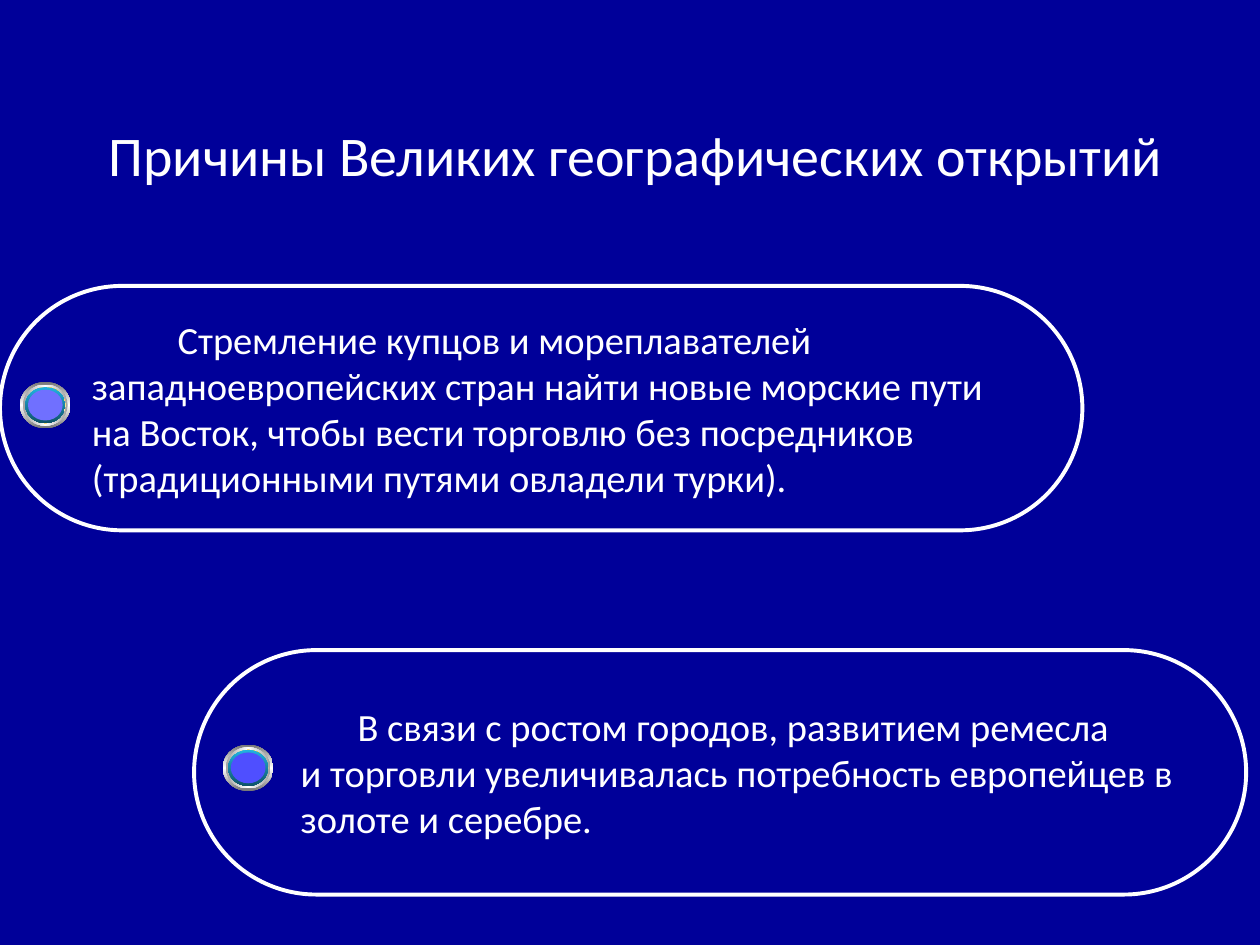
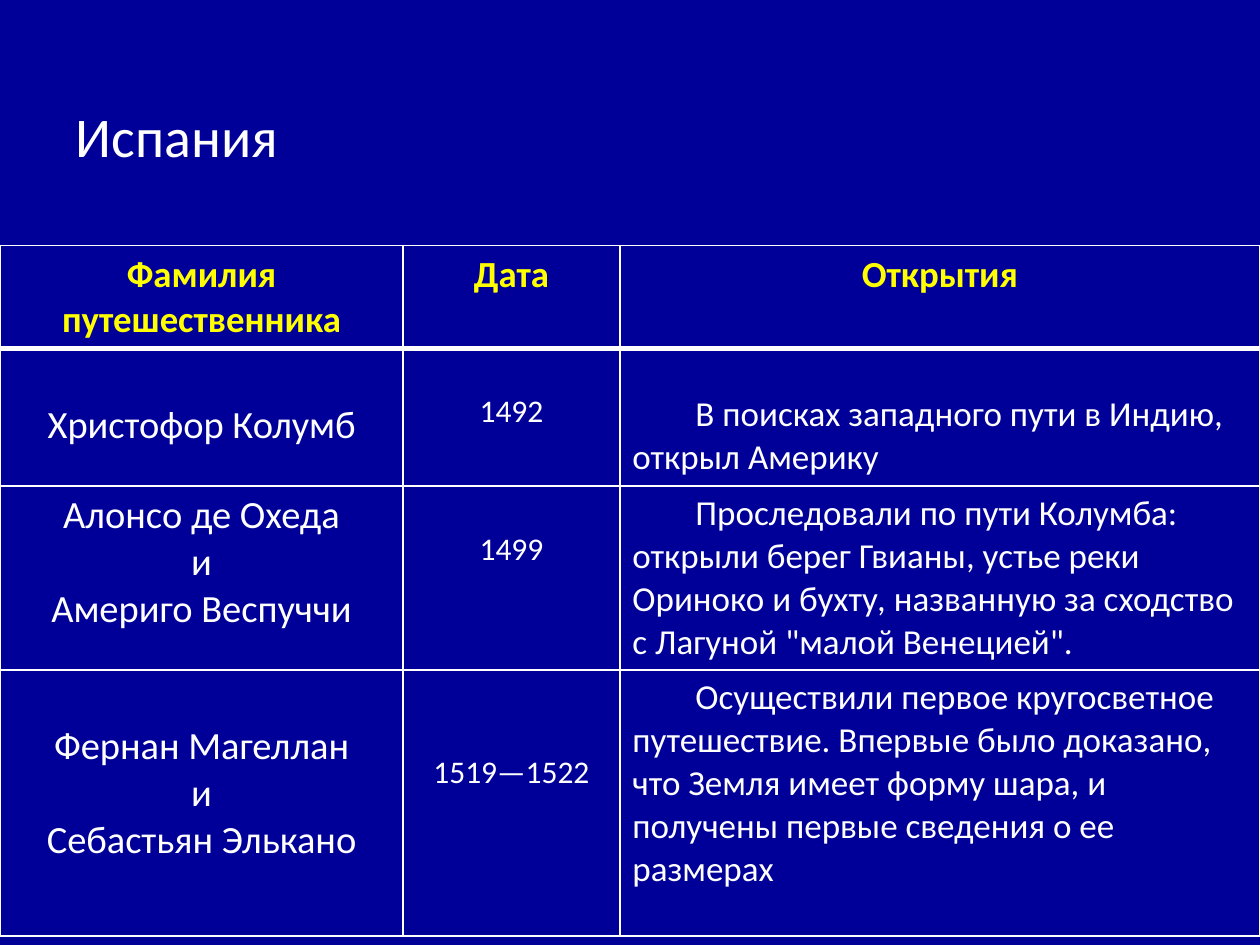
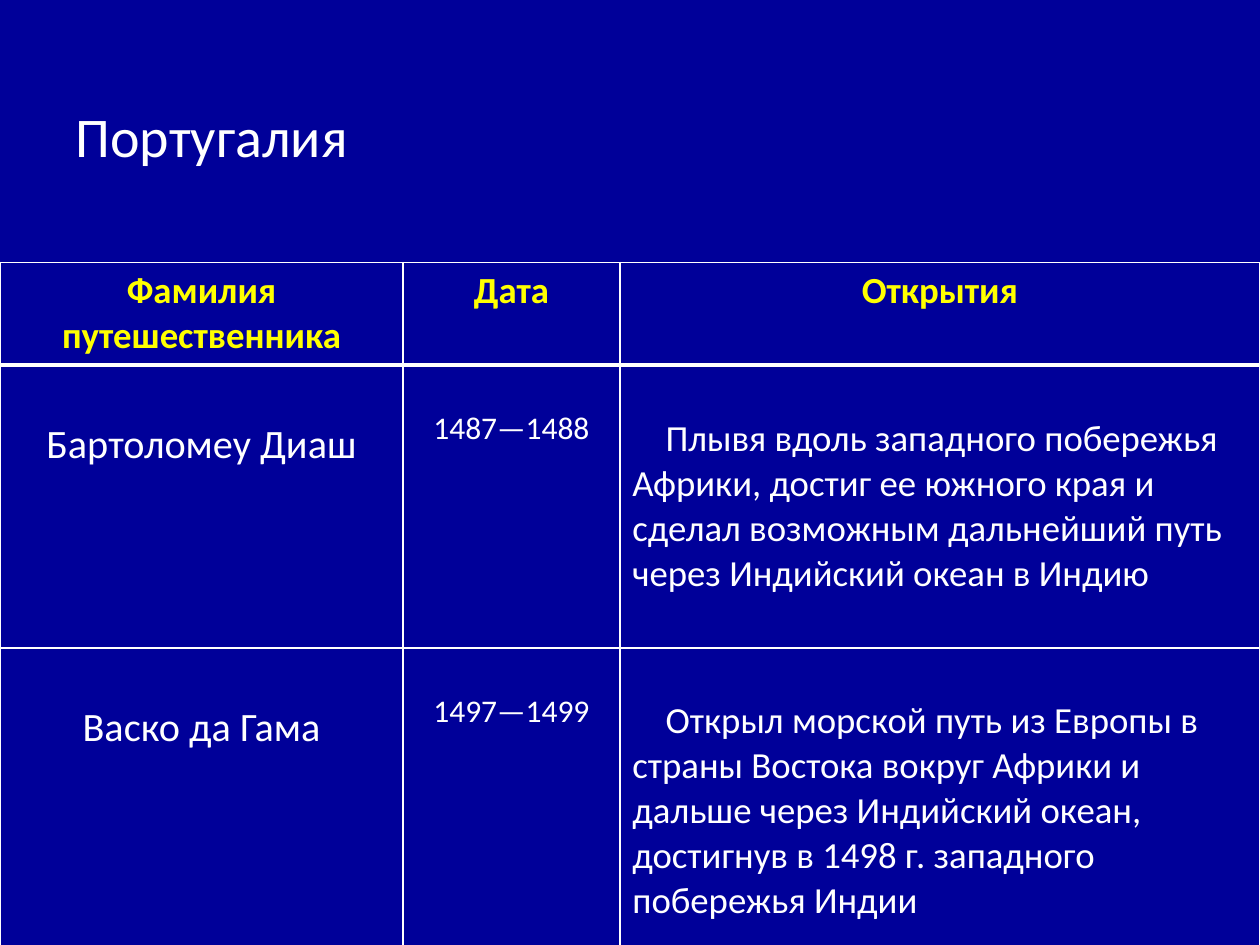
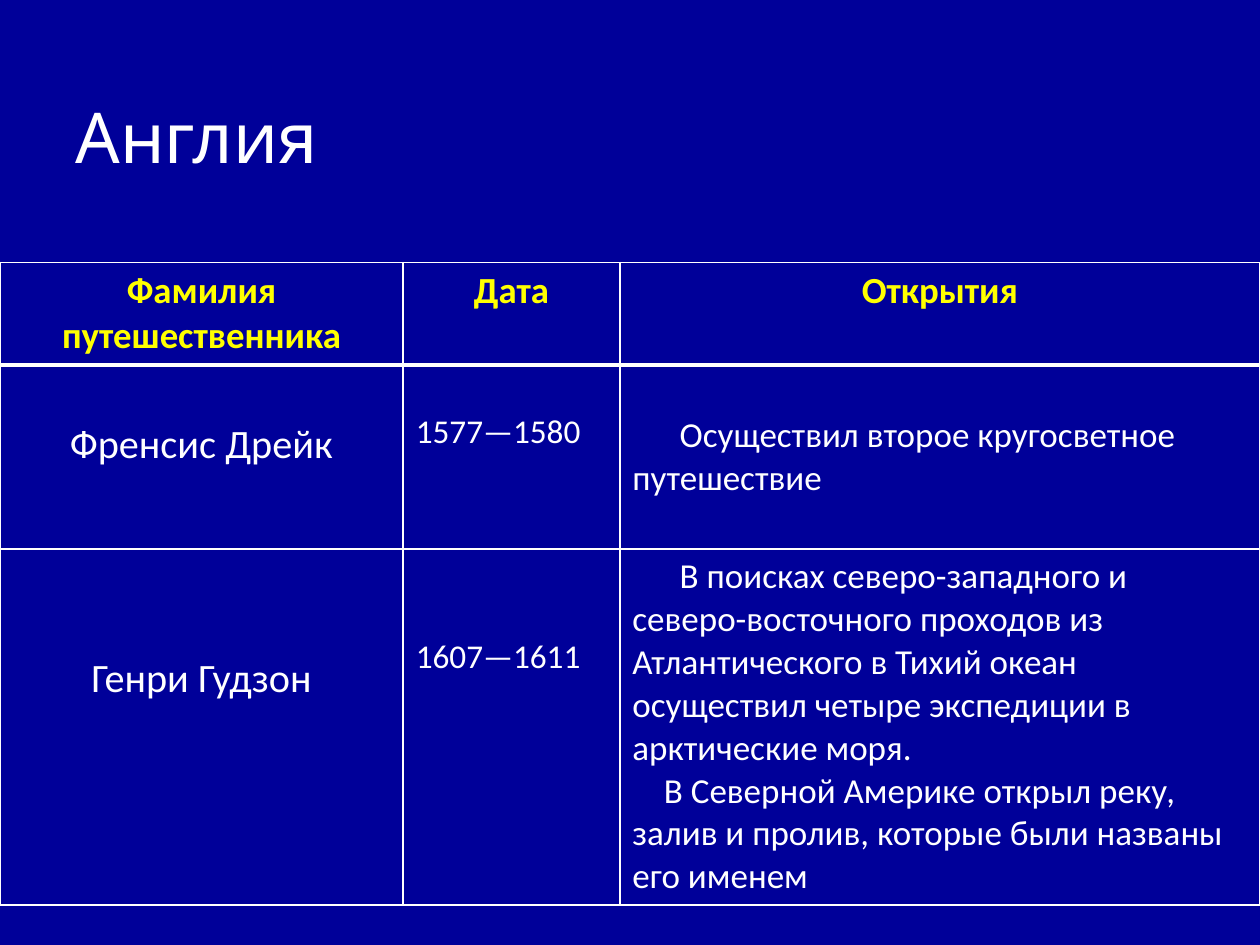
from lxml import etree
from pptx import Presentation
from pptx.dml.color import RGBColor
from pptx.enum.shapes import MSO_SHAPE
from pptx.enum.text import MSO_ANCHOR, PP_ALIGN
from pptx.oxml.ns import qn
from pptx.util import Pt

PILL, OVAL = MSO_SHAPE.ROUNDED_RECTANGLE, MSO_SHAPE.OVAL
LEFT, CENTER = PP_ALIGN.LEFT, PP_ALIGN.CENTER
MIDDLE, TOP = MSO_ANCHOR.MIDDLE, MSO_ANCHOR.TOP

NAVY = RGBColor(0x00, 0x00, 0x99)
WHITE = RGBColor(0xFF, 0xFF, 0xFF)
YELLOW = RGBColor(0xFF, 0xFF, 0x00)
GREY = RGBColor(0x76, 0x76, 0x76)
SILVER = RGBColor(0xA2, 0xA2, 0xA2)
GOLD = RGBColor(0xFF, 0xCC, 0x00)
CYAN = RGBColor(0x21, 0xB3, 0xE1)
TEAL = RGBColor(0x0F, 0x53, 0x68)
LILAC = RGBColor(0x70, 0x70, 0xFF)
VIOLET = RGBColor(0x4F, 0x4F, 0xFF)

FONT, TITLE_FONT = "Calibri", "Cabin"
LINE_HEIGHT = 1.22
CELL_MARGIN = 3.6
COLUMNS = (230.4, 123.8, 365.8)
HEADER_HEIGHT = 58.4
HEADINGS = ("Фамилия путешественника", "Дата", "Открытия")
ORB_SIZE = (28.8, 26.6)
ORB_RINGS = (
    (0, 90, (GREY, WHITE, GREY)),
    (1.6, 0, (SILVER, WHITE, SILVER)),
    (3, 45, (WHITE, GOLD, WHITE)),
    (3, 90, (CYAN, TEAL)),
)
ORB_CORE_INSET = 4.5

CAUSES = (
    dict(box=(0, 163.4, 618.5, 139.7), orb_at=(11.5, 218.2), core=LILAC, margin=25, indent=49,
         text="Стремление купцов и мореплавателей\n"
              "западноевропейских стран найти новые морские пути\n"
              "на Восток, чтобы вести торговлю без посредников\n"
              "(традиционными путями овладели турки)."),
    dict(box=(110.9, 371.5, 601.2, 139.7), orb_at=(127.4, 425.5), core=VIOLET, margin=33.4, indent=32.6,
         text="В связи с ростом городов, развитием ремесла\n"
              "и торговли увеличивалась потребность европейцев в\n"
              "золоте и серебре."),
)

COUNTRIES = (
    dict(title="Испания", top=140.4, sizes=(22, 18, 20), indents=(36,), rows=(
        (78.8, (22, 18, 18), "Христофор Колумб", "1492",
         "В поисках западного пути в Индию, открыл Америку"),
        (105.2, (0, 18, 0), "Алонсо де Охеда\nи\nАмериго Веспуччи", "1499",
         "Проследовали по пути Колумба: открыли берег Гвианы, устье реки Ориноко и бухту, "
         "названную за сходство с Лагуной \"малой Венецией\"."),
        (152, (22, 36, 0), "Фернан Магеллан\nи\nСебастьян Элькано", "1519—1522",
         "Осуществили первое кругосветное путешествие. Впервые было доказано, что Земля имеет "
         "форму шара, и получены первые сведения о ее размерах"),
    )),
    dict(title="Португалия", top=150, sizes=(23, 18, 21), indents=(19,), rows=(
        (161.6, (23, 18, 21), "Бартоломеу Диаш", "1487—1488",
         "Плывя вдоль западного побережья Африки, достиг ее южного края и сделал возможным "
         "дальнейший путь через Индийский океан в Индию"),
        (179.6, (23, 18, 21), "Васко да Гама", "1497—1499",
         "Открыл морской путь из Европы в страны Востока вокруг Африки и дальше через Индийский "
         "океан, достигнув в 1498 г. западного побережья Индии"),
    )),
    dict(title="Англия", top=150, sizes=(23, 19, 20), indents=(27, 18), date_align=LEFT,
         title_size=40, title_font=TITLE_FONT, rows=(
        (105.2, (23, 19, 20), "Френсис Дрейк", "1577—1580",
         "Осуществил второе кругосветное путешествие"),
        (203.4, (46, 38, 0), "Генри Гудзон", "1607—1611",
         "В поисках северо-западного и северо-восточного проходов из Атлантического в Тихий океан "
         "осуществил четыре экспедиции в арктические моря.\n"
         "В Северной Америке открыл реку, залив и пролив, которые были названы его именем"),
    )),
)


def write(frame, text, size=22, font=FONT, color=WHITE, bold=False, align=LEFT, margin=0, indents=(0,)):
    """Fill a text frame, one paragraph a line; lines past the indents get none."""
    for index, line in enumerate(text.split("\n")):
        para = frame.paragraphs[0] if index == 0 else frame.add_paragraph()
        indent = indents[index] if index < len(indents) else 0
        properties = para._p.get_or_add_pPr()
        properties.set("marL", str(Pt(margin)))
        properties.set("indent", str(Pt(indent)))
        para.alignment = align
        span = para.add_run()
        span.text = line
        span.font.size, span.font.name = Pt(size), font
        span.font.bold, span.font.color.rgb = bold, color


def add_page(deck, title, box, **style):
    """Add a title-only page and place its title."""
    page = deck.slides.add_slide(deck.slide_layouts[5])
    holder = page.shapes.title
    holder.left, holder.top, holder.width, holder.height = map(Pt, box)
    holder.text_frame.vertical_anchor = MIDDLE
    write(holder.text_frame, title, **style)
    return page


def add_preset(shapes, preset, box):
    """Add a preset shape without shadow or outline."""
    shape = shapes.add_shape(preset, *map(Pt, box))
    shape.shadow.inherit = False
    shape.line.fill.background()
    return shape


def fill_gradient(shape, angle, colors):
    """Give a shape a linear gradient of evenly spaced colours."""
    shape.fill.gradient()
    gradient = shape._element.spPr.find(qn("a:gradFill"))
    stops = gradient.find(qn("a:gsLst"))
    for stop in list(stops):
        stops.remove(stop)
    for index, color in enumerate(colors):
        stop = etree.SubElement(stops, qn("a:gs"), pos=str(100000 * index // (len(colors) - 1)))
        etree.SubElement(stop, qn("a:srgbClr"), val=str(color))
    gradient.find(qn("a:lin")).set("ang", str(angle * 60000))


def add_orb(page, left, top, core):
    """Draw a bullet button of nested rings around a coloured core."""
    orb = page.shapes.add_group_shape()

    def add_ring(inset):
        """Add one ellipse inset from the edge of the orb."""
        width, height = (side - 2 * inset for side in ORB_SIZE)
        return add_preset(orb.shapes, OVAL, (left + inset, top + inset, width, height))

    for inset, angle, colors in ORB_RINGS:
        fill_gradient(add_ring(inset), angle, colors)
    center = add_ring(ORB_CORE_INSET)
    center.fill.solid()
    center.fill.fore_color.rgb = core


def add_cause(page, box, text, margin, indent):
    """Draw an outlined pill holding one cause."""
    pill = add_preset(page.shapes, PILL, box)
    pill.adjustments[0] = 0.5
    pill.fill.solid()
    pill.fill.fore_color.rgb = NAVY
    pill.line.color.rgb, pill.line.width = WHITE, Pt(2.25)
    pill.text_frame.word_wrap = True
    pill.text_frame.vertical_anchor = MIDDLE
    write(pill.text_frame, text, margin=margin, indents=(indent,))


def format_cell(cell, top_width=1, bottom_width=1, drop=0):
    """Set borders and fill, and lower the text by a drop given as font size."""
    properties = cell._tc.get_or_add_tcPr()
    for side, width in (("L", 1), ("R", 1), ("T", top_width), ("B", bottom_width)):
        border = etree.SubElement(properties, qn(f"a:ln{side}"), w=str(Pt(width)))
        paint = etree.SubElement(border, qn("a:solidFill"))
        etree.SubElement(paint, qn("a:srgbClr"), val=str(WHITE))
    cell.fill.solid()
    cell.fill.fore_color.rgb = NAVY
    cell.vertical_anchor = TOP
    cell.margin_top = Pt(round(CELL_MARGIN + drop * LINE_HEIGHT, 2))


def add_voyages(page, top, rows, sizes, indents, date_align):
    """Add the table of travellers, dates and discoveries."""
    heights = [HEADER_HEIGHT] + [row[0] for row in rows]
    box = (0, top, sum(COLUMNS), sum(heights))
    table = page.shapes.add_table(len(heights), len(COLUMNS), *map(Pt, box)).table
    table.horz_banding = False
    for column, width in zip(table.columns, COLUMNS):
        column.width = Pt(width)
    for row, height in zip(table.rows, heights):
        row.height = Pt(height)
    for column, heading in enumerate(HEADINGS):
        cell = table.cell(0, column)
        format_cell(cell, bottom_width=3)
        write(cell.text_frame, heading, size=21, color=YELLOW, bold=True, align=CENTER)
    aligns = (CENTER, date_align, LEFT)
    column_indents = ((0,), (0,), indents)
    for index, (_, drops, *texts) in enumerate(rows, 1):
        for column, text in enumerate(texts):
            cell = table.cell(index, column)
            format_cell(cell, top_width=3 if index == 1 else 1, drop=drops[column])
            write(cell.text_frame, text, size=sizes[column], align=aligns[column],
                  indents=column_indents[column])


def build_causes(deck):
    """Build the page of causes."""
    page = add_page(deck, "Причины Великих географических открытий", (39.6, 33.8, 648, 108.7),
                    size=32, align=CENTER)
    for cause in CAUSES:
        add_cause(page, cause["box"], cause["text"], cause["margin"], cause["indent"])
    for cause in CAUSES:
        add_orb(page, *cause["orb_at"], cause["core"])


def build_country(deck, title, top, rows, sizes, indents, date_align=CENTER, title_size=32, title_font=FONT):
    """Build the page of one country."""
    page = add_page(deck, title, (36, 23, 648, 108.7), size=title_size, font=title_font)
    add_voyages(page, top, rows, sizes, indents, date_align)


def main():
    """Build and save the deck."""
    deck = Presentation()
    deck.slide_width, deck.slide_height = Pt(720), Pt(540)
    backdrop = deck.slide_master.background.fill
    backdrop.solid()
    backdrop.fore_color.rgb = NAVY
    build_causes(deck)
    for country in COUNTRIES:
        build_country(deck, **country)
    deck.save("out.pptx")


if __name__ == "__main__":
    main()
